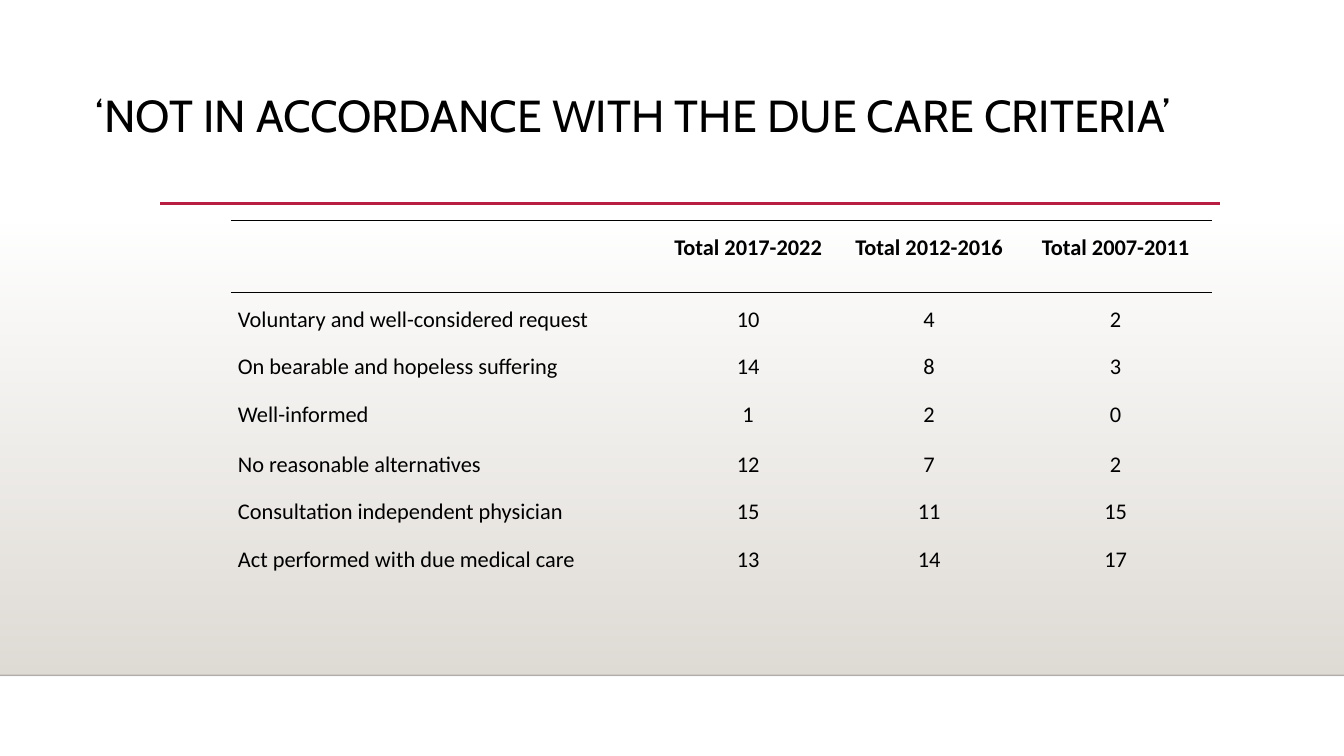
from lxml import etree
from pptx import Presentation
from pptx.dml.color import RGBColor
from pptx.enum.shapes import MSO_CONNECTOR, MSO_SHAPE
from pptx.enum.text import MSO_ANCHOR, MSO_AUTO_SIZE, PP_ALIGN
from pptx.oxml import parse_xml
from pptx.oxml.ns import nsdecls, qn
from pptx.util import Inches, Pt

TITLE = "‘NOT IN ACCORDANCE WITH THE DUE CARE CRITERIA’"
ROWS = [
    ("", "Total 2017-2022", "Total 2012-2016", "Total 2007-2011"),
    ("Voluntary and well-considered request", "10", "4", "2"),
    ("On bearable and hopeless suffering", "14", "8", "3"),
    ("Well-informed", "1", "2", "0"),
    ("No reasonable alternatives", "12", "7", "2"),
    ("Consultation independent physician", "15", "11", "15"),
    ("Act performed with due medical care", "13", "14", "17"),
]
COLUMN_WIDTHS = [4.23, 1.8, 1.79, 1.91]
ROW_HEIGHTS = [0.71, 0.47, 0.47, 0.5, 0.47, 0.47, 0.47]
SLIDE_WIDTH, SLIDE_HEIGHT = 13.33, 7.5
BAND_TOP, BAND_BOTTOM = 2.21, 6.7
PLAIN_TABLE_STYLE = "{2D5ABB26-0587-4C30-8999-92F81FD0307C}"

BLACK = RGBColor(0x00, 0x00, 0x00)
FLOOR = RGBColor(0x00, 0x00, 0x01)
SAND = RGBColor(0xDF, 0xDB, 0xD5)
CRIMSON = RGBColor(0xB7, 0x1E, 0x42)


def set_alpha(color_element, percent):
    alpha = etree.SubElement(color_element, qn("a:alpha"))
    alpha.set("val", str(percent * 1000))


def add_rule(slide, left, right, top, color, width):
    rule = slide.shapes.add_connector(
        MSO_CONNECTOR.STRAIGHT, Inches(left), Inches(top), Inches(right), Inches(top))
    rule.line.color.rgb = color
    rule.line.width = Pt(width)
    etree.SubElement(rule._element.spPr, qn("a:effectLst"))
    return rule


def add_backdrop(slide):
    band = slide.shapes.add_shape(
        MSO_SHAPE.RECTANGLE, 0, Inches(BAND_TOP),
        Inches(SLIDE_WIDTH), Inches(BAND_BOTTOM - BAND_TOP))
    band.shadow.inherit = False
    band.line.fill.background()
    band.fill.gradient()
    band.fill.gradient_angle = 270
    for stop, position in zip(band.fill.gradient_stops, (0, 1)):
        stop.position = position
        stop.color.rgb = SAND
    set_alpha(next(band._element.iter(qn("a:srgbClr"))), 0)

    floor = add_rule(slide, 0, SLIDE_WIDTH, BAND_BOTTOM, FLOOR, 1)
    set_alpha(next(floor._element.iter(qn("a:srgbClr"))), 20)
    add_rule(slide, 1.59, 12.1, 2.02, CRIMSON, 2.5)


def format_title(slide):
    title = slide.shapes.title
    title.left, title.top = Inches(0.85), Inches(0.88)
    title.width, title.height = Inches(11.61), Inches(1.15)
    frame = title.text_frame
    frame.text = TITLE
    frame.auto_size = MSO_AUTO_SIZE.NONE
    frame.vertical_anchor = MSO_ANCHOR.TOP
    paragraph = frame.paragraphs[0]
    paragraph.alignment = PP_ALIGN.LEFT
    paragraph.line_spacing = 0.9
    paragraph.font.name = "Cabin"
    paragraph.font.size = Pt(32)
    paragraph.font.color.rgb = BLACK
    slide.shapes._spTree.append(title._element)


def add_border(cell, side):
    cell._tc.get_or_add_tcPr().append(parse_xml(
        f'<a:{side} {nsdecls("a")} w="{Pt(1)}"><a:solidFill>'
        f'<a:srgbClr val="{BLACK}"/></a:solidFill></a:{side}>'))


def fill_cell(cell, text, is_header, is_label):
    cell.margin_left = cell.margin_right = Inches(0.07)
    cell.margin_top = cell.margin_bottom = 0
    cell.vertical_anchor = MSO_ANCHOR.TOP
    if is_header:
        add_border(cell, "lnT")
        add_border(cell, "lnB")
    cell.fill.background()
    cell.text = text
    paragraph = cell.text_frame.paragraphs[0]
    paragraph.alignment = PP_ALIGN.LEFT if is_label else PP_ALIGN.CENTER
    paragraph.line_spacing = 1.5
    paragraph.space_after = Pt(6)
    paragraph.font.name = "Calibri"
    paragraph.font.size = Pt(16)
    paragraph.font.bold = is_header
    paragraph.font.color.rgb = BLACK


def add_criteria_table(slide):
    table = slide.shapes.add_table(
        len(ROWS), len(COLUMN_WIDTHS), Inches(2.29), Inches(2.19),
        Inches(sum(COLUMN_WIDTHS)), Inches(sum(ROW_HEIGHTS))).table
    table.first_row = table.horz_banding = False
    table._tbl.tblPr.find(qn("a:tableStyleId")).text = PLAIN_TABLE_STYLE
    for column, width in zip(table.columns, COLUMN_WIDTHS):
        column.width = Inches(width)
    for row, height in zip(table.rows, ROW_HEIGHTS):
        row.height = Inches(height)
    for row_index, texts in enumerate(ROWS):
        for column_index, text in enumerate(texts):
            fill_cell(table.cell(row_index, column_index), text,
                      row_index == 0, column_index == 0)


def main():
    presentation = Presentation()
    presentation.slide_width = Inches(SLIDE_WIDTH)
    presentation.slide_height = Inches(SLIDE_HEIGHT)
    slide = presentation.slides.add_slide(presentation.slide_layouts[5])
    add_backdrop(slide)
    format_title(slide)
    add_criteria_table(slide)
    presentation.save("out.pptx")


if __name__ == "__main__":
    main()
